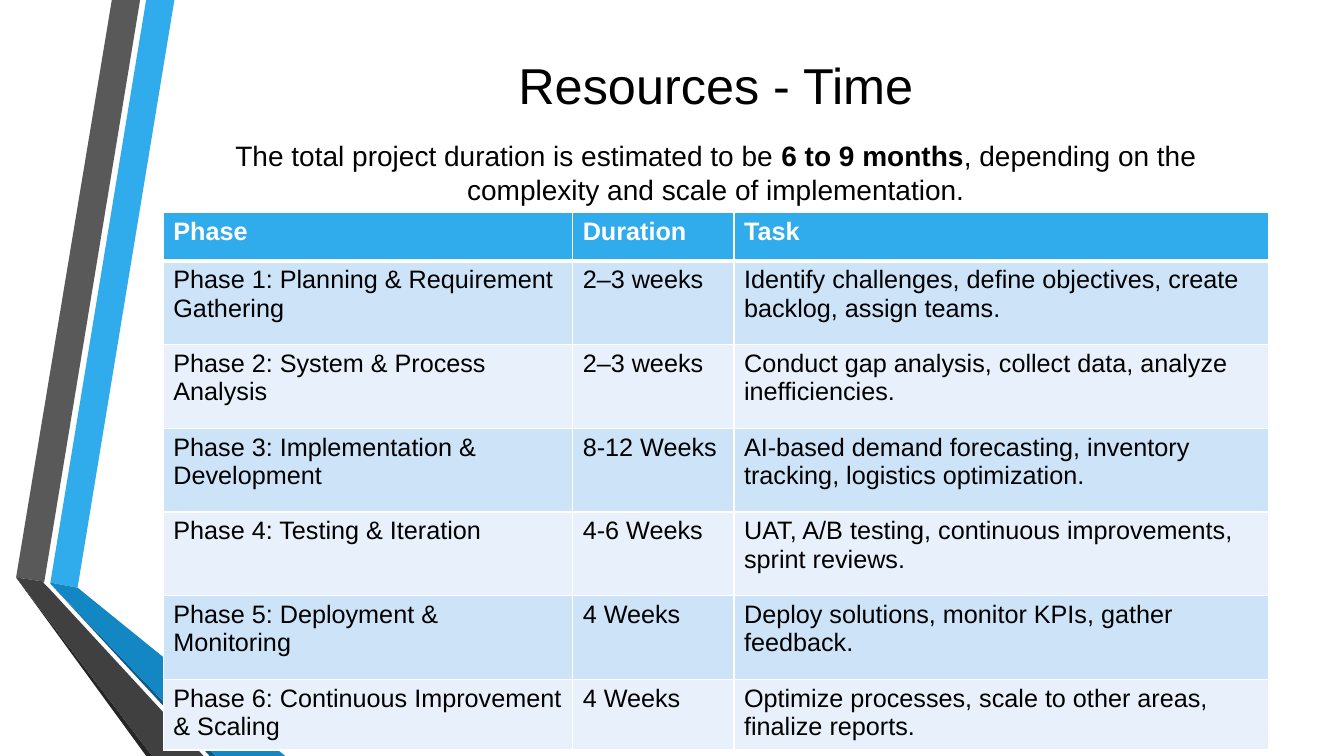
from dataclasses import dataclass
from lxml.etree import SubElement
from pptx import Presentation
from pptx.dml.color import RGBColor as RGB
from pptx.enum.text import MSO_ANCHOR as Anchor, PP_ALIGN as Align
from pptx.oxml.ns import qn
from pptx.util import Inches, Pt


@dataclass(frozen=True)
class Theme:
    font: str = "Arial"
    black: str = "000000"
    white: str = "FFFFFF"
    blue: str = "30ACEC"
    mid: str = "1287C3"
    navy: str = "0C5A82"
    gray: str = "595959"
    dark: str = "404040"
    deep: str = "262626"
    bands: tuple = ("CDE3F8", "E8F1FB")
    title: int = 36
    lead: int = 20
    body: int = 18


THEME = Theme()

# Ribbon facets, back to front: colour and corner points in inches
FACETS = [
    (THEME.blue, [(0.5, 5.78), (0.77, 5.83), (1.73, 0), (1.45, 0)]),
    (THEME.gray, [(1.39, 0), (1.11, 0), (0.16, 5.73), (0.44, 5.77)]),
    (THEME.deep, [(0.16, 5.73), (1.45, 7.5), (1.51, 7.5)]),
    (THEME.navy, [(0.5, 5.79), (2.08, 7.5), (2.14, 7.5)]),
    (THEME.mid, [(0.5, 5.79), (2.14, 7.5), (2.83, 7.5), (0.77, 5.83),
                 (0.5, 5.78)]),
    (THEME.dark, [(2.02, 7.5), (0.48, 5.83), (0.43, 5.78), (0.44, 5.77),
                  (0.16, 5.73), (1.51, 7.5)]),
]

LEAD = [
    ("The total project duration is estimated to be ", False),
    ("6 to 9 months", True),
    (", depending on the complexity and scale of implementation.", False),
]

PLAN = [
    ("Phase", "Duration", "Task"),
    ("Phase 1: Planning & Requirement Gathering", "2–3 weeks",
     "Identify challenges, define objectives, create backlog, assign teams."),
    ("Phase 2: System & Process Analysis", "2–3 weeks",
     "Conduct gap analysis, collect data, analyze inefficiencies."),
    ("Phase 3: Implementation & Development", "8-12 Weeks",
     "AI-based demand forecasting, inventory tracking, logistics optimization."),
    ("Phase 4: Testing & Iteration", "4-6 Weeks",
     "UAT, A/B testing, continuous improvements, sprint reviews."),
    ("Phase 5: Deployment & Monitoring", "4 Weeks",
     "Deploy solutions, monitor KPIs, gather feedback."),
    ("Phase 6: Continuous Improvement & Scaling", "4 Weeks",
     "Optimize processes, scale to other areas, finalize reports."),
]
COLS = (4.06, 1.6, 5.3)
ROWS = (0.48, *[0.83] * 5, 0.48)


def style(run, size, color=THEME.black, bold=False):
    run.font.name = THEME.font
    run.font.size = Pt(size)
    run.font.bold = bold
    run.font.color.rgb = RGB.from_string(color)


def add_ribbon(slide, left, top):
    for color, points in FACETS:
        spots = [(Inches(left + x), Inches(top + y)) for x, y in points]
        pen = slide.shapes.build_freeform(*spots[0], scale=1.0)
        pen.add_line_segments(spots[1:], close=True)
        facet = pen.convert_to_shape()
        facet.shadow.inherit = False
        facet.fill.solid()
        facet.fill.fore_color.rgb = RGB.from_string(color)
        facet.line.fill.background()


def add_text(slide, box, parts, size):
    frame = slide.shapes.add_textbox(*map(Inches, box)).text_frame
    frame.word_wrap = True
    frame.vertical_anchor = Anchor.MIDDLE
    para = frame.paragraphs[0]
    para.alignment = Align.CENTER
    for words, bold in parts:
        run = para.add_run()
        run.text = words
        style(run, size, bold=bold)


def add_edge(cell, side, width):
    edge = SubElement(cell._tc.get_or_add_tcPr(), qn(f"a:ln{side}"),
                      w=str(Pt(width)))
    fill = SubElement(edge, qn("a:solidFill"))
    SubElement(fill, qn("a:srgbClr"), val=THEME.white)


def add_plan(slide, box):
    table = slide.shapes.add_table(
        len(PLAN), len(COLS), *map(Inches, box)).table
    for col, width in zip(table.columns, COLS):
        col.width = Inches(width)
    for row, height in zip(table.rows, ROWS):
        row.height = Inches(height)
    for r, line in enumerate(PLAN):
        head = r == 0
        for c, words in enumerate(line):
            cell = table.cell(r, c)
            # Borders come before the fill; a thick rule ends the header
            for side in "LRTB":
                thick = (r, side) in ((0, "B"), (1, "T"))
                add_edge(cell, side, 3 if thick else 1)
            cell.fill.solid()
            cell.fill.fore_color.rgb = RGB.from_string(
                THEME.blue if head else THEME.bands[(r - 1) % 2])
            cell.text_frame.text = words
            style(cell.text_frame.paragraphs[0].runs[0], THEME.body,
                  THEME.white if head else THEME.black, head)


def main():
    deck = Presentation()
    deck.slide_width, deck.slide_height = Inches(13.33), Inches(7.5)
    slide = deck.slides.add_slide(deck.slide_layouts[6])
    left, width = 1.62, sum(COLS)
    add_ribbon(slide, 0, 0)
    add_text(slide, (left, 0.52, width, 0.63),
             [("Resources - Time", False)], THEME.title)
    add_plan(slide, (left, 2.11, width, sum(ROWS)))
    add_text(slide, (left, 0.75, width, 1.92), LEAD, THEME.lead)
    deck.save("out.pptx")


if __name__ == "__main__":
    main()
